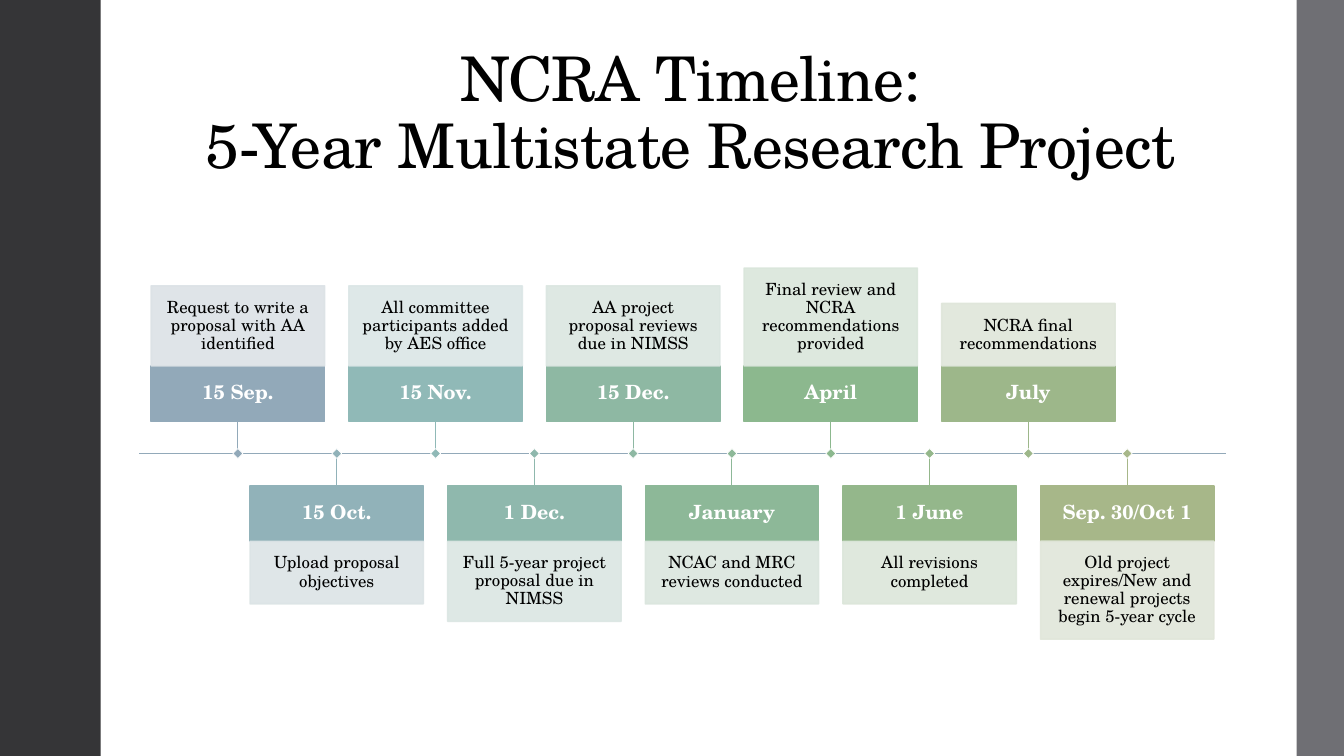
"""Build the NCRA timeline slide for a five-year multistate research project."""
from dataclasses import dataclass

from lxml.etree import SubElement
from pptx import Presentation
from pptx.dml.color import RGBColor
from pptx.enum.shapes import MSO_CONNECTOR as Connector, MSO_SHAPE as Preset
from pptx.enum.text import MSO_ANCHOR as Anchor, PP_ALIGN as Align
from pptx.oxml.ns import qn
from pptx.util import Inches, Pt

FONT = "TeX Gyre Schola"
COLORS = {"dark": "353537", "grey": "6F6F74", "white": "FFFFFF",
          "black": "000000", "axis": "92A9B9"}
AXIS_Y = 4.5
FIRST_CENTER, PITCH = 2.36, 0.98
BOX_WIDTH, DATE_HEIGHT, STEM = 1.72, 0.55, 0.32
NOTE_PADDING, LINE_HEIGHT = 0.27, 0.175
MARKER = 0.07


@dataclass(frozen=True)
class Milestone:
    date: str
    note: str
    lines: int
    color: str
    tint: str


MILESTONES = [
    Milestone("15 Sep.", "Request to write a proposal with AA identified", 3, "92A9B9", "DCE2E6"),
    Milestone("15 Oct.", "Upload proposal objectives", 2, "91B2B9", "DCE4E6"),
    Milestone("15 Nov.", "All committee participants added by AES office", 3, "90B9B7", "DBE6E6"),
    Milestone("1 Dec.", "Full 5-year project proposal due in NIMSS", 3, "8FB8AD", "DBE6E3"),
    Milestone("15 Dec.", "AA project proposal reviews due in NIMSS", 3, "8EB8A3", "DBE6E1"),
    Milestone("January", "NCAC and MRC reviews conducted", 2, "8DB898", "DBE6DE"),
    Milestone("April", "Final review and NCRA recommendations provided", 4, "8CB88E", "DAE6DB"),
    Milestone("1 June", "All revisions completed", 2, "94B78B", "DCE6DA"),
    Milestone("July", "NCRA final recommendations", 2, "9DB78A", "DFE6DA"),
    Milestone("Sep. 30/Oct 1", "Old project expires/New and renewal projects begin 5-year cycle",
              4, "A7B789", "E1E6DA"),
]


def add_rect(page, left: float, top: float, width: float, height: float,
             fill: str, line: str = "", weight: float = 1.1):
    box = page.shapes.add_shape(Preset.RECTANGLE, Inches(left), Inches(top),
                                Inches(width), Inches(height))
    box.shadow.inherit = False
    box.fill.solid()
    box.fill.fore_color.rgb = RGBColor.from_string(fill)
    if line:
        box.line.color.rgb = RGBColor.from_string(line)
        box.line.width = Pt(weight)
    else:
        box.line.fill.background()
    return box


def add_line(page, start: tuple[float, float], end: tuple[float, float],
             color: str, weight: float) -> None:
    line = page.shapes.add_connector(Connector.STRAIGHT, *map(Inches, start + end))
    line.line.color.rgb = RGBColor.from_string(color)
    line.line.width = Pt(weight)
    SubElement(line._element.spPr, qn("a:effectLst"))


def write(box, text: str, size: float, color: str, bold: bool = False,
          inset: float = 0.1, anchor: Anchor = Anchor.MIDDLE) -> None:
    frame = box.text_frame
    frame.word_wrap = True
    frame.vertical_anchor = anchor
    frame.margin_left = frame.margin_right = Inches(inset)
    frame.margin_top = frame.margin_bottom = Inches(inset)
    para = frame.paragraphs[0]
    para.text = text
    para.alignment = Align.CENTER
    para.line_spacing = 0.9
    for span in para.runs:
        span.font.name = FONT
        span.font.size = Pt(size)
        span.font.bold = bold
        span.font.color.rgb = RGBColor.from_string(color)


def add_title(page) -> None:
    box = page.shapes.add_textbox(Inches(1), Inches(0.4), Inches(11.86), Inches(1.45))
    write(box, "NCRA Timeline: \n5-Year Multistate Research Project ", 44,
          COLORS["black"], inset=0.05, anchor=Anchor.BOTTOM)
    for span in box.text_frame.paragraphs[0].runs:
        span._r.get_or_add_rPr().set("spc", "-50")


def add_milestone(page, index: int, item: Milestone) -> None:
    center = FIRST_CENTER + index * PITCH
    left = center - BOX_WIDTH / 2
    note_height = NOTE_PADDING + LINE_HEIGHT * item.lines
    if index % 2 == 0:
        stem_end = AXIS_Y - STEM
        date_top = stem_end - DATE_HEIGHT
        note_top = date_top - note_height
    else:
        stem_end = date_top = AXIS_Y + STEM
        note_top = date_top + DATE_HEIGHT

    date = add_rect(page, left, date_top, BOX_WIDTH, DATE_HEIGHT, item.color, item.color)
    write(date, item.date, 14, COLORS["white"], bold=True, inset=0.08)
    note = add_rect(page, left, note_top, BOX_WIDTH, note_height, item.tint, item.tint)
    for color in note._element.spPr.iter(qn("a:srgbClr")):
        SubElement(color, qn("a:alpha"), val="90000")
    write(note, item.note, 12, COLORS["black"], inset=0.12)
    add_line(page, (center, AXIS_Y), (center, stem_end), item.color, 0.75)
    marker = add_rect(page, center - MARKER / 2, AXIS_Y - MARKER / 2, MARKER, MARKER,
                      item.color, COLORS["white"], 0.5)
    marker.rotation = 45


def main() -> None:
    deck = Presentation()
    deck.slide_width, deck.slide_height = Inches(13.33), Inches(7.5)
    page = deck.slides.add_slide(deck.slide_layouts[6])
    add_title(page)
    add_rect(page, 0, 0, 1, 7.5, COLORS["dark"])
    add_rect(page, 12.86, 0, 0.47, 7.5, COLORS["grey"])
    add_line(page, (1.38, AXIS_Y), (12.16, AXIS_Y), COLORS["axis"], 1.1)
    for index, item in enumerate(MILESTONES):
        add_milestone(page, index, item)
    deck.save("out.pptx")


if __name__ == "__main__":
    main()
